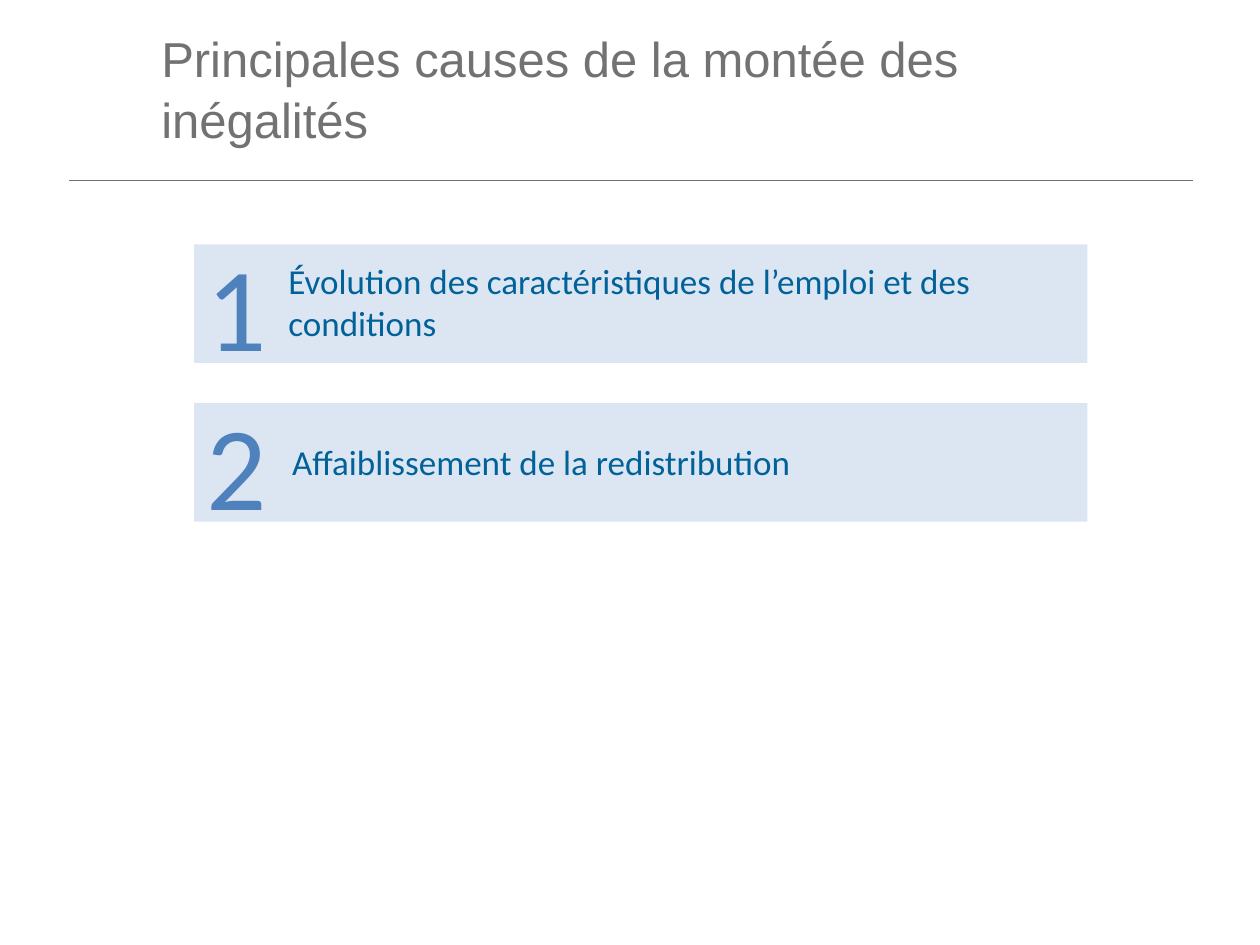
from dataclasses import dataclass

from lxml import etree
from pptx import Presentation
from pptx.dml.color import RGBColor
from pptx.enum.shapes import MSO_CONNECTOR, MSO_SHAPE
from pptx.enum.text import MSO_ANCHOR, MSO_AUTO_SIZE, PP_ALIGN
from pptx.oxml.ns import qn
from pptx.util import Inches, Pt

RECT = MSO_SHAPE.RECTANGLE
STRAIGHT = MSO_CONNECTOR.STRAIGHT
MIDDLE = MSO_ANCHOR.MIDDLE
NO_FIT = MSO_AUTO_SIZE.NONE
LEFT = PP_ALIGN.LEFT


@dataclass(frozen=True)
class Theme:
    grey: str = "727272"
    bar: str = "DCE6F2"
    number: str = "4F81BD"
    label: str = "006299"
    title_font: str = "Arial"
    body_font: str = "Calibri"
    title_size: int = 28
    number_size: int = 68
    label_size: int = 20
    rule_width: float = 0.5


THEME = Theme()
CAUSES = [
    ("1", "Évolution des caractéristiques de l’emploi et des conditions", 2.19, 1.92),
    ("2", "Affaiblissement de la redistribution", 2.22, 3.19),
]


def rgb(value):
    return RGBColor.from_string(value)


def write(sp, text, *, font, size, color, spacing=1.0):
    tf = sp.text_frame
    tf.word_wrap = True
    tf.auto_size = NO_FIT
    tf.vertical_anchor = MIDDLE
    p = tf.paragraphs[0]
    p.alignment = LEFT
    p.line_spacing = spacing
    r = p.add_run()
    r.text = text
    r.font.name = font
    r.font.size = Pt(size)
    r.font.color.rgb = rgb(color)


def add_rule(slide, left, top, width):
    line = slide.shapes.add_connector(
        STRAIGHT, Inches(left), Inches(top), Inches(left + width), Inches(top))
    line.line.color.rgb = rgb(THEME.grey)
    line.line.width = Pt(THEME.rule_width)
    etree.SubElement(line._element.spPr, qn("a:effectLst"))


def add_title(slide, left, top, width, height, text):
    sp = slide.shapes.title
    sp.left, sp.top = Inches(left), Inches(top)
    sp.width, sp.height = Inches(width), Inches(height)
    write(sp, text, font=THEME.title_font, size=THEME.title_size,
          color=THEME.grey, spacing=1.05)


def add_cause(slide, left, top, width, height, number, label, label_left, label_top):
    sp = slide.shapes.add_shape(
        RECT, Inches(left), Inches(top), Inches(width), Inches(height))
    sp.shadow.inherit = False
    sp.fill.solid()
    sp.fill.fore_color.rgb = rgb(THEME.bar)
    sp.line.fill.background()
    write(sp, number, font=THEME.body_font, size=THEME.number_size, color=THEME.number)
    box = slide.shapes.add_textbox(
        Inches(label_left), Inches(label_top), Inches(6.38), Inches(height))
    write(box, label, font=THEME.body_font, size=THEME.label_size, color=THEME.label)


def main():
    prs = Presentation()
    prs.slide_width, prs.slide_height = Inches(10), Inches(7.5)
    slide = prs.slides.add_slide(prs.slide_layouts[5])
    add_rule(slide, 0.55, 1.43, 8.92)
    add_title(slide, 1.18, 0, 7.76, 1.38,
              "Principales causes de la montée des inégalités")
    for i, cause in enumerate(CAUSES):
        add_cause(slide, 1.54, 1.94 + i * 1.26, 7.09, 0.94, *cause)
    prs.save("out.pptx")


if __name__ == "__main__":
    main()
